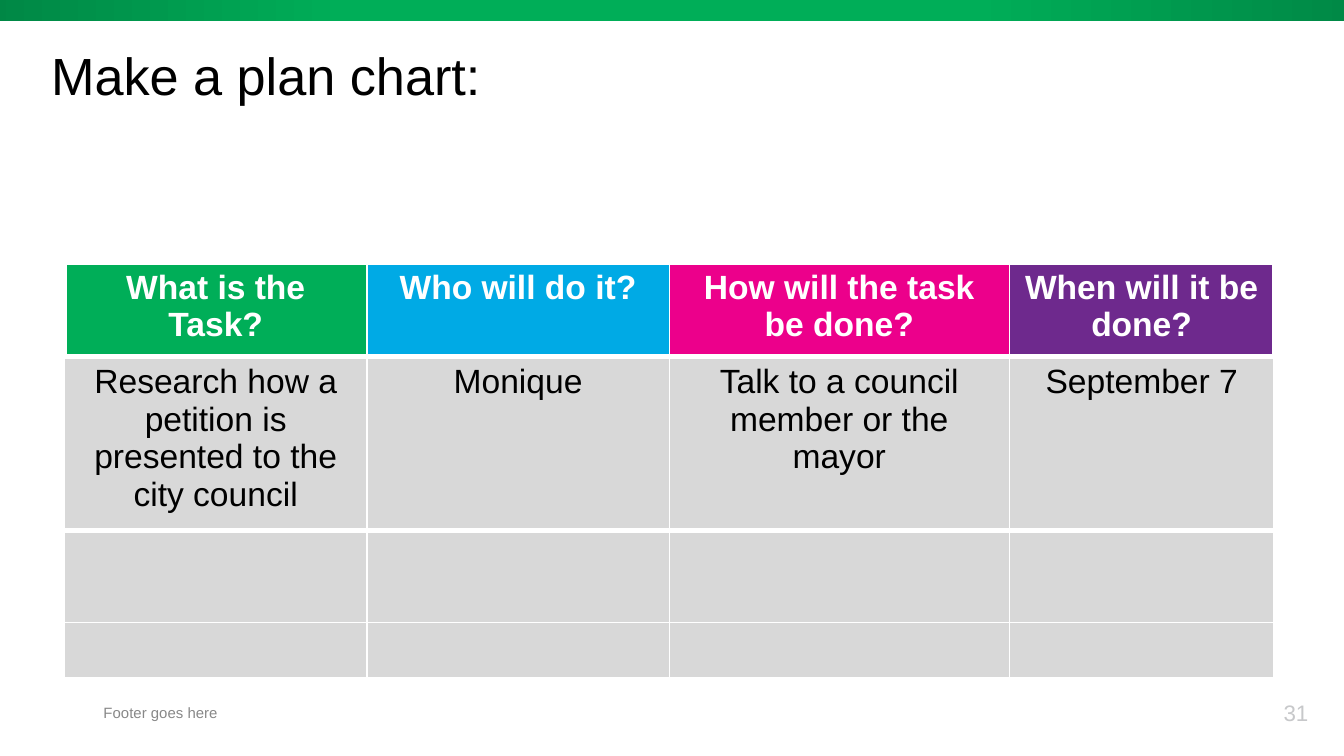
from dataclasses import dataclass

from lxml import etree
from pptx import Presentation
from pptx.dml import color
from pptx.enum import shapes, text
from pptx.oxml import ns
from pptx.util import Inches, Pt


@dataclass(frozen=True)
class Theme:
    font: str = "Arial"
    black: str = "000000"
    white: str = "FFFFFF"
    green: str = "00AE58"
    dark_green: str = "008745"
    blue: str = "00AAE5"
    pink: str = "EC008B"
    purple: str = "6E298D"
    cell: str = "D8D8D8"
    footer: str = "888888"
    number: str = "C7C8CA"
    title_size: int = 28
    table_size: int = 18
    number_size: int = 12
    footer_size: int = 8
    thick: int = 3
    thin: int = 1


THEME = Theme()
COLUMN_WIDTHS = [2.25, 2.25, 2.53, 1.97]
ROW_HEIGHTS = [0.51, 0.54, 0.68, 0.41]
HEADER_FILLS = [THEME.green, THEME.blue, THEME.pink, THEME.purple]
PLAN = [
    ["What is the Task?", "Who will do it?", "How will the task be done?", "When will it be done?"],
    ["Research how a petition is presented to the city council", "Monique",
     "Talk to a council member or the mayor", "September 7"],
    [""] * 4,
    [""] * 4,
]


def write(frame, words, size, ink, bold=False, align=text.PP_ALIGN.LEFT, spacing=None):
    para = frame.paragraphs[0]
    para.alignment = align
    para.line_spacing = spacing
    font = para.font
    if words:
        span = para.add_run()
        span.text = words
        font = span.font
    font.name = THEME.font
    font.size = Pt(size)
    font.bold = bold
    font.color.rgb = color.RGBColor.from_string(ink)


def add_text(page, place, words, **style):
    box = page.shapes.add_textbox(*map(Inches, place))
    frame = box.text_frame
    frame.word_wrap = True
    frame.vertical_anchor = text.MSO_ANCHOR.MIDDLE
    frame.margin_left = frame.margin_top = frame.margin_right = frame.margin_bottom = 0
    write(frame, words, **style)


def add_banner(page, place, stops):
    banner = page.shapes.add_shape(shapes.MSO_SHAPE.RECTANGLE, *map(Inches, place))
    banner.shadow.inherit = False
    banner.line.fill.background()
    banner.fill.gradient()
    banner.fill.gradient_angle = 0
    stop_list = next(banner._element.iter(ns.qn("a:gsLst")))
    for stop in list(stop_list):
        stop_list.remove(stop)
    for position, shade in stops:
        stop = etree.SubElement(stop_list, ns.qn("a:gs"), pos=str(position * 1000))
        etree.SubElement(stop, ns.qn("a:srgbClr"), val=shade)


def set_borders(cell, **widths):
    properties = cell._tc.get_or_add_tcPr()
    for side, width in widths.items():
        line = etree.SubElement(properties, ns.qn(f"a:ln{side}"), w=str(Pt(width)))
        fill = etree.SubElement(line, ns.qn("a:solidFill"))
        etree.SubElement(fill, ns.qn("a:srgbClr"), val=THEME.white)


def add_plan_table(page, place):
    holder = page.shapes.add_table(len(PLAN), len(PLAN[0]), *map(Inches, place))
    table = holder.table
    for column, width in zip(table.columns, COLUMN_WIDTHS):
        column.width = Inches(width)
    for row, height in zip(table.rows, ROW_HEIGHTS):
        row.height = Inches(height)
    holder.height = Inches(place[3])

    thick, thin = THEME.thick, THEME.thin
    row_edges = [thick, thick, thick, thin, thin]
    for r, entries in enumerate(PLAN):
        header = r == 0
        outer = thick if header else thin
        column_edges = [outer, thin, thin, thin, outer]
        for c, words in enumerate(entries):
            cell = table.cell(r, c)
            set_borders(cell, L=column_edges[c], R=column_edges[c + 1],
                        T=row_edges[r], B=row_edges[r + 1])
            cell.fill.solid()
            shade = HEADER_FILLS[c] if header else THEME.cell
            cell.fill.fore_color.rgb = color.RGBColor.from_string(shade)
            write(cell.text_frame, words, THEME.table_size,
                  THEME.white if header else THEME.black,
                  bold=header, align=text.PP_ALIGN.CENTER)


def main():
    deck = Presentation()
    deck.slide_width = Inches(10)
    deck.slide_height = deck.slide_width * 9 // 16
    page = deck.slides.add_slide(deck.slide_layouts[6])

    add_banner(page, (-0.09, -0.01, 10.3, 0.17),
               [(0, THEME.dark_green), (26, THEME.green), (71, THEME.green), (100, THEME.dark_green)])
    add_text(page, (0.38, 0.21, 6.38, 0.78), "Make a plan chart:",
             size=THEME.title_size, ink=THEME.black, spacing=0.8)
    add_text(page, (9.55, 5.15, 0.45, 0.3), "31", size=THEME.number_size, ink=THEME.number)
    add_text(page, (0.77, 5.22, 5.81, 0.17), "Footer goes here",
             size=THEME.footer_size, ink=THEME.footer)
    add_plan_table(page, (0.48, 1.95, sum(COLUMN_WIDTHS), 3.09))

    deck.save("out.pptx")


if __name__ == "__main__":
    main()
